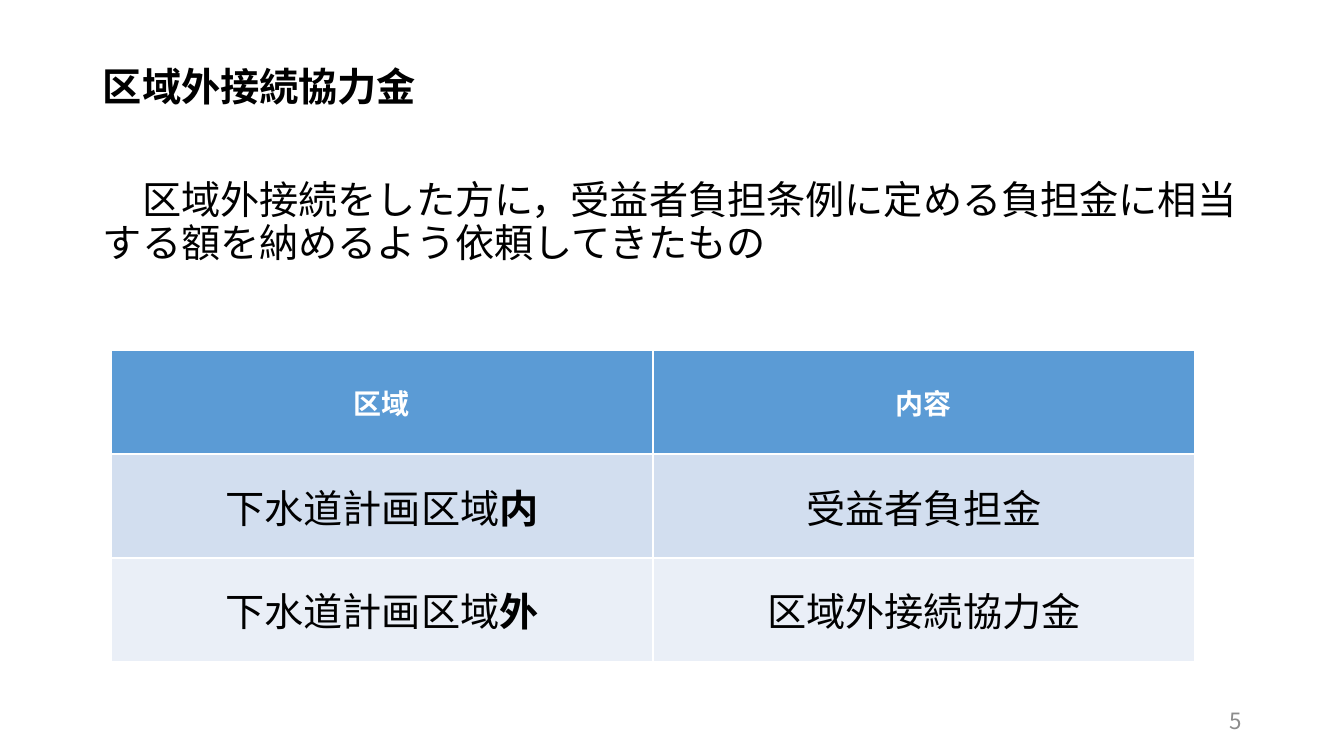
import pptx
import pptx.dml.color
import pptx.enum.text
import pptx.oxml.ns
import pptx.util
from lxml import etree

# Content: each text is a list of (words, bold)
HEADING = [("区域外接続協力金", True)]
EXPLANATION = [("\u3000区域外接続をした方に，受益者負担条例に定める負担金に相当する額を納めるよう依頼してきたもの".replace("\u3000", "　"), False)]
FEE_TABLE = [
    ([("区域", True)], [("内容", True)]),
    ([("下水道計画区域", False), ("内", True)], [("受益者負担金", False)]),
    ([("下水道計画区域", False), ("外", True)], [("区域外接続協力金", False)]),
]
PAGE_NUMBER = [("5", False)]

# Look
COLORS = {"text": "000000", "header_text": "FFFFFF", "page": "8C8C8C"}
ROW_FILLS = ["5B9BD5", "D2DEEF", "EAEFF7"]
CJK_FONT = "Noto Sans CJK JP"
TABLE_FONT = "Arial"
LINE_HEIGHT = 30.75  # points

# Boxes in px: left, top, width, height
SLIDE_SIZE = (1344, 756)
HEADING_BOX = (93, 66, 1159, 60)
EXPLANATION_BOX = (93, 179, 1159, 124)
TABLE_BOX = (111, 350, 1084, 312)
PAGE_BOX = (950, 701, 302, 40)

ALIGN = pptx.enum.text.PP_ALIGN
ANCHOR = pptx.enum.text.MSO_ANCHOR


def px(length):
    return pptx.util.Emu(round(length * 914400 / 100.8))


def rgb(color):
    return pptx.dml.color.RGBColor.from_string(color)


def write(frame, runs, size=28, color=COLORS["text"], font=CJK_FONT,
          align=ALIGN.LEFT, line_height=None):
    paragraph = frame.paragraphs[0]
    paragraph.alignment = align
    paragraph.space_before = pptx.util.Pt(0)
    if line_height:
        paragraph.line_spacing = pptx.util.Pt(line_height)
    for words, bold in runs:
        run = paragraph.add_run()
        run.text = words
        run.font.size = pptx.util.Pt(size)
        run.font.bold = bold
        run.font.name = font
        run.font.color.rgb = rgb(color)
        east_asian = etree.SubElement(run.font._element, pptx.oxml.ns.qn("a:ea"))
        east_asian.set("typeface", CJK_FONT)
    return paragraph


def place(shape, box, anchor):
    shape.left, shape.top, shape.width, shape.height = map(px, box)
    frame = shape.text_frame
    frame.word_wrap = True
    frame.auto_size = pptx.enum.text.MSO_AUTO_SIZE.NONE
    frame.vertical_anchor = anchor
    frame.margin_left = frame.margin_right = px(10)
    frame.margin_top = frame.margin_bottom = 0
    return frame


def add_fee_table(slide):
    table = slide.shapes.add_table(
        len(FEE_TABLE), len(FEE_TABLE[0]), *map(px, TABLE_BOX)).table
    for row, (texts, fill) in enumerate(zip(FEE_TABLE, ROW_FILLS)):
        is_header = row == 0
        for column, runs in enumerate(texts):
            cell = table.cell(row, column)
            cell.fill.solid()
            cell.fill.fore_color.rgb = rgb(fill)
            cell.vertical_anchor = ANCHOR.MIDDLE
            write(cell.text_frame, runs, font=TABLE_FONT, align=ALIGN.CENTER,
                  size=20 if is_header else 28,
                  color=COLORS["header_text" if is_header else "text"])


def main():
    presentation = pptx.Presentation()
    presentation.slide_width, presentation.slide_height = map(px, SLIDE_SIZE)
    slide = presentation.slides.add_slide(presentation.slide_layouts[1])

    # Heading and explanation
    heading = place(slide.shapes.title, HEADING_BOX, ANCHOR.TOP)
    write(heading, HEADING, line_height=LINE_HEIGHT)
    explanation = place(slide.placeholders[1], EXPLANATION_BOX, ANCHOR.TOP)
    paragraph = write(explanation, EXPLANATION, line_height=LINE_HEIGHT)
    properties = paragraph._p.get_or_add_pPr()
    properties.set("marL", "0")
    properties.set("indent", "0")
    etree.SubElement(properties, pptx.oxml.ns.qn("a:buNone"))

    # Table and page number
    add_fee_table(slide)
    page = slide.shapes.add_textbox(*map(px, PAGE_BOX))
    write(place(page, PAGE_BOX, ANCHOR.MIDDLE), PAGE_NUMBER,
          size=16, color=COLORS["page"], align=ALIGN.RIGHT)

    presentation.save("out.pptx")


if __name__ == "__main__":
    main()
